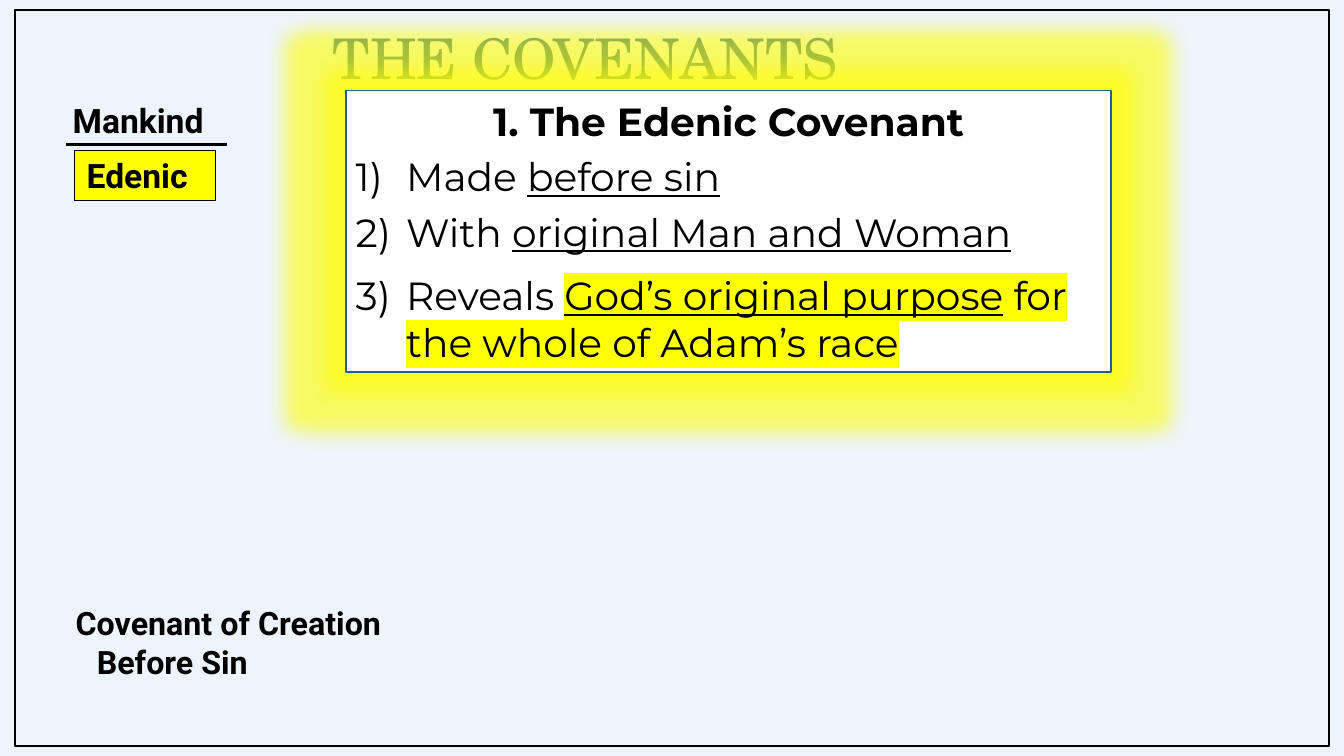
from lxml import etree
from pptx import Presentation
from pptx import util as u
from pptx.dml.color import RGBColor
from pptx.enum import shapes, text
from pptx.oxml.ns import qn

BLACK, BLUE, YELLOW, WHITE = "000000", "215F9A", "FFFF00", "FFFFFF"


def rgb(value):
    return RGBColor.from_string(value)


class CovenantSlide:
    """Draws styled elements on one slide."""

    label_font = "Roboto"
    title_font = "TeX Gyre Schola"
    body_font = "Montserrat"

    def __init__(self, deck, background):
        self.slide = deck.slides.add_slide(deck.slide_layouts[6])
        fill = self.slide.background.fill
        fill.solid()
        fill.fore_color.rgb = rgb(background)

    def line(self, x1, y1, x2, y2, width):
        rule = self.slide.shapes.add_connector(
            shapes.MSO_CONNECTOR.STRAIGHT, *map(u.Inches, (x1, y1, x2, y2)))
        rule.line.color.rgb = rgb(BLACK)
        rule.line.width = u.Pt(width)
        etree.SubElement(rule._element.spPr, qn("a:effectLst"))

    def box(self, place, outline, width, fill=None):
        panel = self.slide.shapes.add_shape(
            shapes.MSO_SHAPE.RECTANGLE, *map(u.Inches, place))
        panel.shadow.inherit = False
        panel.line.color.rgb = rgb(outline)
        panel.line.width = u.Pt(width)
        if fill:
            panel.fill.solid()
            panel.fill.fore_color.rgb = rgb(fill)
        else:
            panel.fill.background()
        return panel

    def textbox(self, place):
        return self.slide.shapes.add_textbox(*map(u.Inches, place))

    def glow(self, panel, radius, color, alpha):
        effects = panel._element.spPr.find(qn("a:effectLst"))
        halo = etree.SubElement(effects, qn("a:glow"), rad=str(u.Inches(radius)))
        tint = etree.SubElement(halo, qn("a:srgbClr"), val=color)
        etree.SubElement(tint, qn("a:alpha"), val=str(alpha * 1000))

    def frame(self, holder, inset=0.1):
        frame = holder.text_frame
        frame.word_wrap = True
        frame.auto_size = text.MSO_AUTO_SIZE.SHAPE_TO_FIT_TEXT
        frame.margin_left = u.Inches(inset)
        return frame

    def style(self, run, font, size, color=BLACK, bold=False):
        run.font.name = font
        run.font.size = u.Pt(size)
        run.font.bold = bold
        run.font.color.rgb = rgb(color)

    def label(self, holder, wording, inset, font=label_font, size=24,
              color=BLACK, bold=True):
        frame = self.frame(holder, inset)
        frame.text = wording
        for paragraph in frame.paragraphs:
            paragraph.alignment = text.PP_ALIGN.LEFT
            self.style(paragraph.runs[0], font, size, color, bold)
        return frame

    def highlight(self, run, color):
        mark = etree.Element(qn("a:highlight"))
        etree.SubElement(mark, qn("a:srgbClr"), val=color)
        run.font._element.find(qn("a:latin")).addprevious(mark)

    def indent(self, paragraph, left, first=0):
        properties = paragraph._p.get_or_add_pPr()
        properties.set("marL", str(u.Inches(left)))
        properties.set("indent", str(u.Inches(first)))
        return properties

    def numbered(self, paragraph, pieces):
        paragraph.alignment = text.PP_ALIGN.LEFT
        paragraph.level = 1
        for wording, underlined, marked in pieces:
            run = paragraph.add_run()
            run.text = wording
            self.style(run, self.body_font, 28)
            run.font.underline = underlined
            if marked:
                self.highlight(run, YELLOW)
        properties = self.indent(paragraph, 0.5, -0.5)
        etree.SubElement(properties, qn("a:buFont"), typeface="+mj-lt")
        etree.SubElement(properties, qn("a:buAutoNum"), type="arabicParenR")


def main():
    deck = Presentation()
    deck.slide_width, deck.slide_height = u.Inches(13.33), u.Inches(7.5)
    page = CovenantSlide(deck, "EDF4FB")

    page.line(0.65, 1.43, 2.25, 1.43, 2.25)
    edenic = page.box((0.74, 1.49, 1.4, 0.5), BLACK, 0.75, YELLOW)
    page.label(edenic, "Edenic", 0.12)
    page.label(page.textbox((0.55, 0.94, 1.81, 0.5)), "Mankind", 0.17)
    page.box((0.15, 0.1, 13.03, 7.3), BLACK, 1.5)
    page.label(page.textbox((2.32, 0.18, 8.85, 0.77)), "THE COVENANTS", 0.98,
               page.title_font, 40, BLUE, False)
    creation = page.label(page.textbox((0.32, 5.94, 3.89, 0.88)),
                          "Covenant of Creation\nBefore Sin", 0.43, size=23)
    page.indent(creation.paragraphs[1], 0.21)

    covenant = page.box((3.43, 0.9, 7.59, 2.79), BLUE, 1, WHITE)
    page.glow(covenant, 0.4, YELLOW, 60)
    body = page.frame(covenant)
    body.text = "1. The Edenic Covenant"
    heading = body.paragraphs[0]
    heading.alignment = text.PP_ALIGN.CENTER
    heading.space_after = u.Pt(6)
    page.style(heading.runs[0], page.body_font, 28, bold=True)

    points = [
        [("Made ", False, False), ("before sin", True, False)],
        [("With ", False, False), ("original Man and Woman", True, False)],
        [("Reveals ", False, False), ("God’s original purpose", True, True),
         (" for the whole of Adam’s race", False, True)],
    ]
    for pieces in points:
        point = body.add_paragraph()
        if pieces is points[-1]:
            point.space_before = u.Pt(6)
        else:
            point.space_after = u.Pt(6)
        page.numbered(point, pieces)

    deck.save("out.pptx")


if __name__ == "__main__":
    main()
